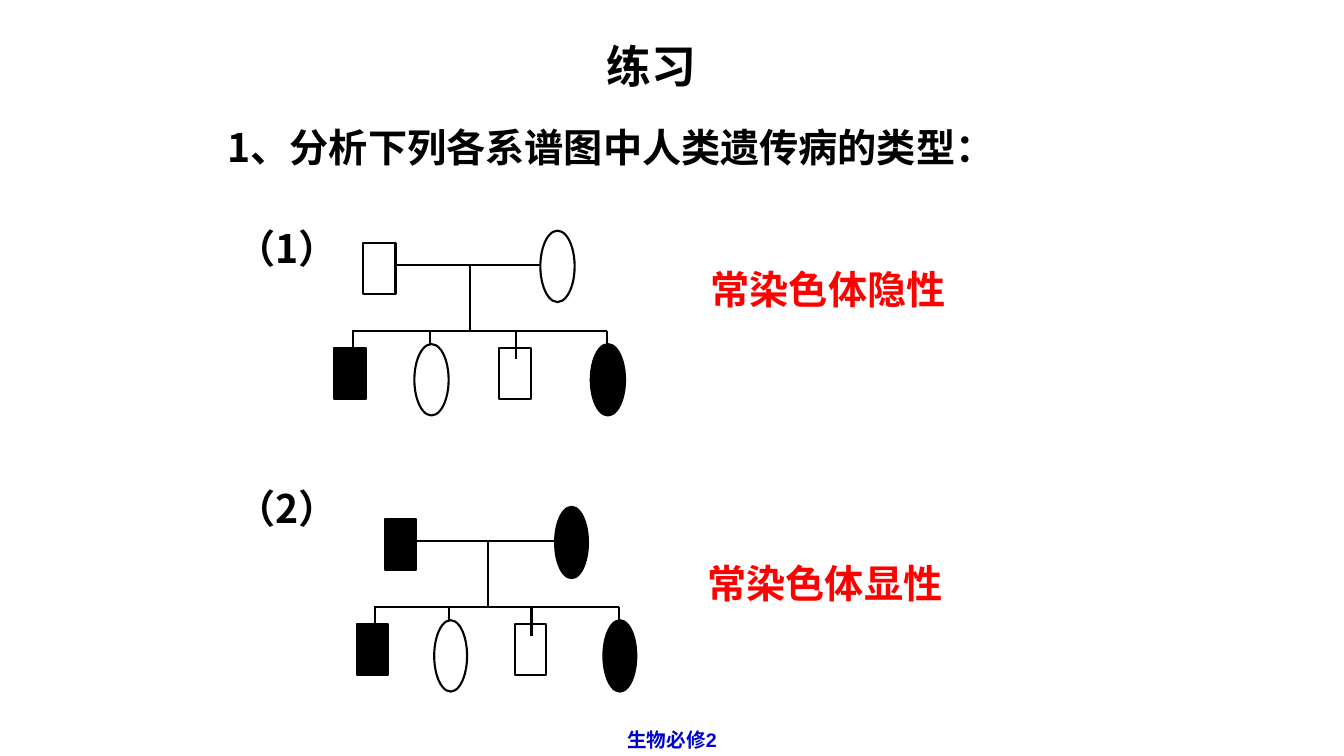
import pptx
import pptx.util
import pptx.dml.color
import pptx.enum.shapes
import pptx.enum.text
import pptx.oxml.ns
import lxml.etree
from dataclasses import dataclass

Pt = pptx.util.Pt
Color = pptx.dml.color.RGBColor.from_string
Kind = pptx.enum.shapes.MSO_SHAPE
Align = pptx.enum.text.PP_ALIGN
qn = pptx.oxml.ns.qn


@dataclass(frozen=True)
class Theme:
    ink: str = "000000"
    paper: str = "FFFFFF"
    answer: str = "FF0000"
    foot: str = "0000CC"
    title: int = 32
    body: int = 28
    small: int = 14
    line: float = 1.5
    sans: str = "Noto Sans CJK SC"
    serif: str = "Times New Roman"
    latin: str = "Arial"


THEME = Theme()


def label(slide, box, text, size=THEME.body, color=THEME.ink,
          font=THEME.sans, align=Align.LEFT):
    frame = slide.shapes.add_textbox(*map(Pt, box)).text_frame
    frame.word_wrap = True
    frame.vertical_anchor = pptx.enum.text.MSO_ANCHOR.MIDDLE
    para = frame.paragraphs[0]
    para.alignment = align
    run = para.add_run()
    run.text = text
    run.font.name = font
    run.font.size = Pt(size)
    run.font.bold = True
    run.font.color.rgb = Color(color)
    east = lxml.etree.SubElement(run.font._element, qn("a:ea"))
    east.set("typeface", THEME.sans)


def pedigree(slide, box, sick):
    """Draw two parents and four children; sick holds the affected members."""
    left, top, width, height = box
    group = slide.shapes.add_group_shape()

    def place(x, y):
        """Turn a position on the 208 by 132 pedigree grid into slide lengths."""
        return Pt(left + x * width / 208), Pt(top + y * height / 132)

    def line(x1, y1, x2, y2):
        wire = group.shapes.add_connector(
            pptx.enum.shapes.MSO_CONNECTOR.STRAIGHT, *place(x1, y1), *place(x2, y2))
        wire.line.color.rgb = Color(THEME.ink)
        wire.line.width = Pt(THEME.line)
        lxml.etree.SubElement(wire._element.spPr, qn("a:effectLst"))

    def person(name, male, x, y):
        kind = Kind.RECTANGLE if male else Kind.OVAL
        wide, high = (23, 37) if male else (24.5, 51)
        shape = group.shapes.add_shape(
            kind, *place(x, y), Pt(wide * width / 208), Pt(high * height / 132))
        shape.shadow.inherit = False
        shape.fill.solid()
        shape.fill.fore_color.rgb = Color(THEME.ink if name in sick else THEME.paper)
        shape.line.color.rgb = Color(THEME.ink)
        shape.line.width = Pt(THEME.line)

    mate, bar = 24.5, 71.5
    person("father", True, 21, 8.5)
    person("mother", False, 147.5, 0)
    line(44.5, mate, 147.5, mate)
    line(97.5, mate, 97.5, bar)
    line(13, bar, 195, bar)

    sons = (("son 1", 0, 13.5), ("son 2", 118, 130))
    girls = (("girl 1", 57.5, 68.5), ("girl 2", 183.5, 195))
    for name, x, drop in sons:
        person(name, True, x, 83.5)
        line(drop, bar, drop, 92)
    for name, x, drop in girls:
        line(drop, bar, drop, 98.5)
        person(name, False, x, 81)


def exercise(slide, box, number, tree, sick, answer, reply):
    """Place number, pedigree and answer relative to the exercise box."""
    left, top, width, height = box
    x, y, wide, high = tree
    pedigree(slide, (left + x, top + y, wide, high), sick)
    label(slide, (left, top, 183, 41), number)
    x, y = reply
    label(slide, (left + x, top + y, width - x, 41), answer, color=THEME.answer)


def heading(slide, box):
    left, top, width, height = box
    label(slide, (left + 270.5, top, 174, 45.5), "练习", THEME.title, font=THEME.serif)
    label(slide, (left, top + 60.5, width, 41), "1、分析下列各系谱图中人类遗传病的类型：")


def footer(slide, box):
    label(slide, box, "生物必修2", THEME.small, THEME.foot, THEME.latin, Align.CENTER)


def main():
    deck = pptx.Presentation()
    deck.slide_width, deck.slide_height = Pt(960), Pt(540)
    slide = deck.slides.add_slide(deck.slide_layouts[6])
    heading(slide, (155.5, 23.75, 660, 102))
    exercise(slide, (162, 156.25, 662, 141), "（1）", (76.5, 8.5, 208, 132),
             {"son 1", "girl 2"}, "常染色体隐性", (338.5, 29.5))
    exercise(slide, (162, 342, 666, 153), "（2）", (93, 20, 199.5, 132),
             {"father", "mother", "son 1", "girl 2"}, "常染色体显性", (336.25, 54))
    footer(slide, (270, 516, 420, 24))
    deck.save("out.pptx")


if __name__ == "__main__":
    main()
